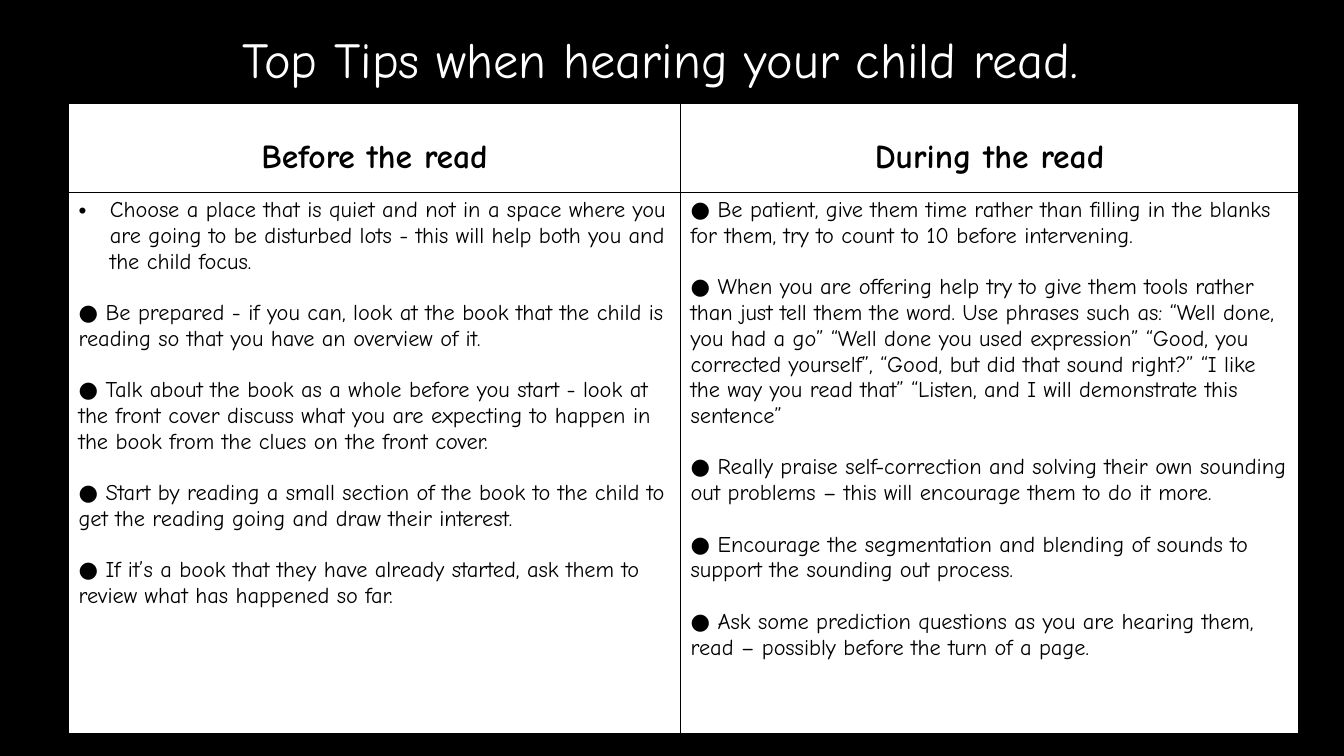
from dataclasses import dataclass

from lxml import etree
from pptx import Presentation
from pptx.dml import color as dml
from pptx.enum import text as txt
from pptx.oxml import ns
from pptx.util import Inches, Pt


@dataclass(frozen=True)
class Theme:
    font: str = "Comic Neue"
    dark: str = "000000"
    light: str = "FFFFFF"
    title: int = 36
    head: int = 24
    body: int = 16
    gap: float = 18.4  # one body line between tips
    rule: int = 1


@dataclass(frozen=True)
class Column:
    head: str
    width: float
    tips: tuple[str, ...]
    bullet: bool = False  # the first tip has a hanging bullet


THEME = Theme()
ROWS = (0.88, 5.37)
COLUMNS = (
    Column("Before the read", 6.07, (
        "Choose a place that is quiet and not in a space where you are going to be "
        "disturbed lots - this will help both you and the child focus.",
        "● Be prepared - if you can, look at the book that the child is reading so "
        "that you have an overview of it.",
        "● Talk about the book as a whole before you start - look at the front cover "
        "discuss what you are expecting to happen in the book from the clues on the "
        "front cover.",
        "● Start by reading a small section of the book to the child to get the "
        "reading going and draw their interest.",
        "● If it’s a book that they have already started, ask them to review what "
        "has happened so far.",
    ), bullet=True),
    Column("During the read", 6.13, (
        "● Be patient, give them time rather than filling in the blanks for them, "
        "try to count to 10 before intervening.",
        "● When you are offering help try to give them tools rather than just tell "
        "them the word. Use phrases such as: “Well done, you had a go” “Well done "
        "you used expression” “Good, you corrected yourself”, “Good, but did that "
        "sound right?” “I like the way you read that” “Listen, and I will "
        "demonstrate this sentence”",
        "● Really praise self-correction and solving their own sounding out "
        "problems – this will encourage them to do it more.",
        "● Encourage the segmentation and blending of sounds to support the "
        "sounding out process.",
        "● Ask some prediction questions as you are hearing them, read – possibly "
        "before the turn of a page.",
    )),
)


def apply(item, values: dict) -> None:
    for name, value in values.items():
        setattr(item, name, value)


def write(para, words: str, size: int, color: str, bold: bool = False) -> None:
    run = para.add_run()
    run.text = words
    apply(run.font, {"name": THEME.font, "size": Pt(size), "bold": bold})
    run.font.color.rgb = dml.RGBColor.from_string(color)


def frame(cell) -> None:
    """Fill a cell and rule its four sides."""
    cell.fill.solid()
    cell.fill.fore_color.rgb = dml.RGBColor.from_string(THEME.light)
    props = cell._tc.get_or_add_tcPr()
    for spot, side in enumerate(("lnL", "lnR", "lnT", "lnB")):
        line = etree.Element(ns.qn(f"a:{side}"), w=str(Pt(THEME.rule)))
        fill = etree.SubElement(line, ns.qn("a:solidFill"))
        etree.SubElement(fill, ns.qn("a:srgbClr"), val=THEME.dark)
        props.insert(spot, line)


def hang(para) -> None:
    """Give a paragraph a hanging bullet."""
    props = para._p.get_or_add_pPr()
    apply_to = {"marL": Inches(0.31), "indent": -Inches(0.31)}
    for name, value in apply_to.items():
        props.set(name, str(value))
    etree.SubElement(props, ns.qn("a:buFont"), typeface="Arial")
    etree.SubElement(props, ns.qn("a:buChar"), char="•")


def add_title(slide, words: str) -> None:
    title = slide.shapes.title
    apply(title, {"left": Inches(0.45), "top": Inches(0.23),
                  "width": Inches(12.2), "height": Inches(1.92)})
    apply(title.text_frame, {"word_wrap": True,
                             "auto_size": txt.MSO_AUTO_SIZE.NONE,
                             "vertical_anchor": txt.MSO_ANCHOR.TOP})
    para = title.text_frame.paragraphs[0]
    para.alignment = txt.PP_ALIGN.CENTER
    write(para, words, THEME.title, THEME.light)


def add_tips(slide) -> None:
    table = slide.shapes.add_table(
        len(ROWS), len(COLUMNS), Inches(0.68), Inches(1.03),
        Inches(sum(col.width for col in COLUMNS)), Inches(sum(ROWS))).table
    apply(table, {"first_row": False, "horz_banding": False})
    for row, height in zip(table.rows, ROWS):
        row.height = Inches(height)

    for spot, col in enumerate(COLUMNS):
        table.columns[spot].width = Inches(col.width)
        head, body = table.cell(0, spot), table.cell(1, spot)
        frame(head)
        frame(body)

        # Heading
        head.margin_top = Inches(0.34)
        para = head.text_frame.paragraphs[0]
        para.alignment = txt.PP_ALIGN.CENTER
        write(para, col.head, THEME.head, THEME.dark, bold=True)

        # Tips
        for count, tip in enumerate(col.tips):
            if count:
                para = body.text_frame.add_paragraph()
                para.space_before = Pt(THEME.gap)
            else:
                para = body.text_frame.paragraphs[0]
                if col.bullet:
                    hang(para)
            write(para, tip, THEME.body, THEME.dark)


def main() -> None:
    deck = Presentation()
    apply(deck, {"slide_width": Inches(13.33), "slide_height": Inches(7.5)})
    slide = deck.slides.add_slide(deck.slide_layouts[5])
    slide.background.fill.solid()
    slide.background.fill.fore_color.rgb = dml.RGBColor.from_string(THEME.dark)
    add_title(slide, "Top Tips when hearing your child read.")
    add_tips(slide)
    deck.save("out.pptx")


if __name__ == "__main__":
    main()
